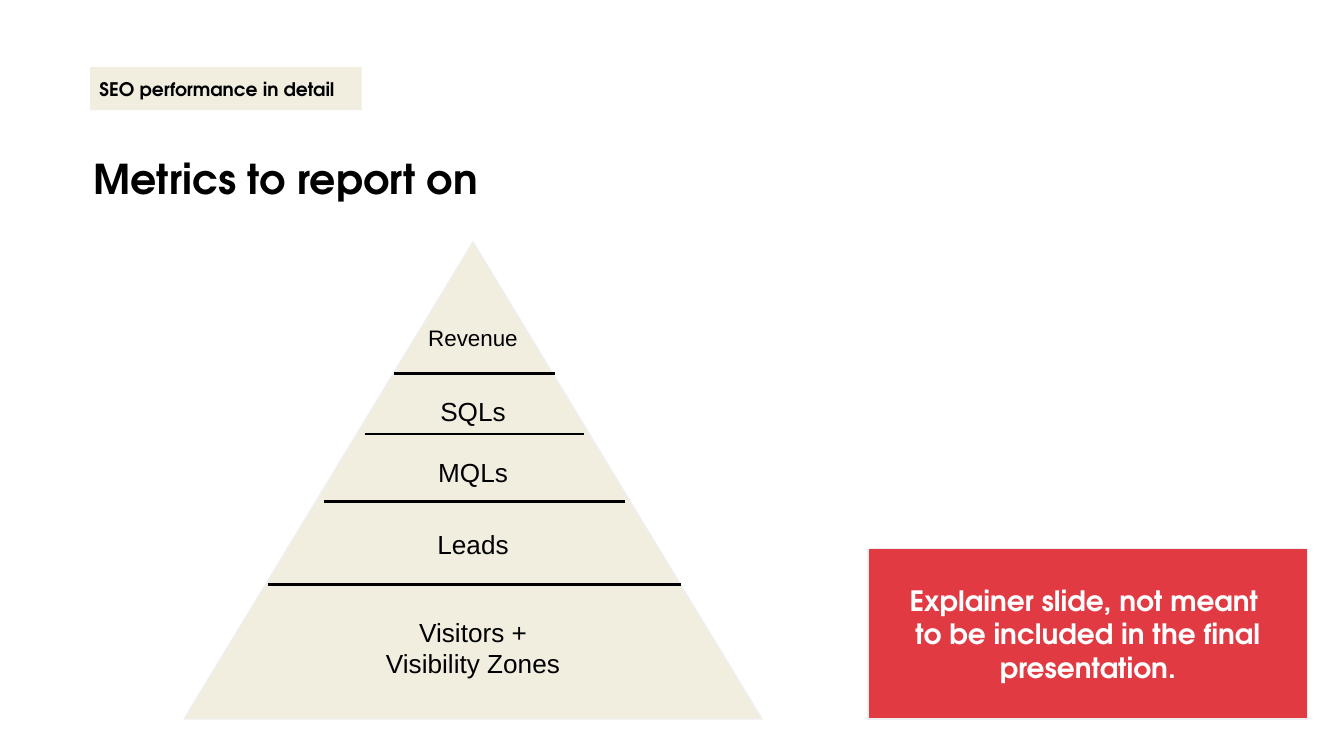
from dataclasses import dataclass

from lxml.etree import SubElement
from pptx import Presentation
from pptx.dml.color import RGBColor
from pptx.enum.shapes import MSO_CONNECTOR, MSO_SHAPE
from pptx.enum.text import MSO_ANCHOR, MSO_AUTO_SIZE, PP_ALIGN
from pptx.oxml.ns import qn
from pptx.util import Inches, Pt


@dataclass(frozen=True)
class Theme:
    ink: str = "000000"
    paper: str = "FFFFFF"
    sand: str = "F1EEE0"
    outline: str = "EFEFEF"
    alert: str = "E23A43"
    heading_font: str = "TeX Gyre Adventor"
    body_font: str = "Arial"
    tag_size: int = 10
    peak_size: int = 12
    tier_size: int = 14
    note_size: int = 15
    title_size: int = 22
    outline_width: float = 0.75
    divider_width: float = 1.5


THEME = Theme()

# label, lines, type size, label width, label centre and divider height from
# the top of the pyramid, divider length
TIERS = [
    ("Revenue", 1, THEME.peak_size, 0.92, 0.71, 0.98, 1.2),
    ("SQLs", 1, THEME.tier_size, 0.73, 1.26, 1.43, 1.63),
    ("MQLs", 1, THEME.tier_size, 0.73, 1.71, 1.93, 2.24),
    ("Leads", 1, THEME.tier_size, 0.92, 2.25, 2.55, 3.07),
    ("Visitors + Visibility Zones", 2, THEME.tier_size, 1.55, 3.02, None, None),
]


def rgb(color):
    return RGBColor.from_string(color)


def add_panel(slide, preset, box, fill, outline=None):
    panel = slide.shapes.add_shape(preset, *map(Inches, box))
    panel.shadow.inherit = False
    panel.fill.solid()
    panel.fill.fore_color.rgb = rgb(fill)
    if outline:
        panel.line.color.rgb = rgb(outline)
        panel.line.width = Pt(THEME.outline_width)
    else:
        panel.line.fill.background()
    return panel


def write(frame, paragraphs, size, font, color=THEME.ink, bold=False,
          align=PP_ALIGN.LEFT, anchor=MSO_ANCHOR.TOP, inset=0.1):
    frame.word_wrap = True
    frame.vertical_anchor = anchor
    frame.margin_left = frame.margin_right = Inches(inset)
    frame.margin_top = frame.margin_bottom = Inches(inset)
    for index, text in enumerate(paragraphs):
        paragraph = frame.add_paragraph() if index else frame.paragraphs[0]
        paragraph.alignment = align
        run = paragraph.add_run()
        run.text = text
        run.font.size = Pt(size)
        run.font.name = font
        run.font.bold = bold
        run.font.color.rgb = rgb(color)


def add_label(slide, box, text, size, font, **style):
    frame = slide.shapes.add_textbox(*map(Inches, box)).text_frame
    write(frame, [text], size, font, **style)
    frame.auto_size = MSO_AUTO_SIZE.SHAPE_TO_FIT_TEXT


def add_divider(slide, center, y, length):
    divider = slide.shapes.add_connector(
        MSO_CONNECTOR.STRAIGHT, Inches(center - length / 2), Inches(y),
        Inches(center + length / 2), Inches(y))
    divider.line.color.rgb = rgb(THEME.ink)
    divider.line.width = Pt(THEME.divider_width)
    SubElement(divider.element.spPr, qn("a:effectLst"))


def add_pyramid(slide, box):
    left, top, width, _ = box
    center = left + width / 2
    add_panel(slide, MSO_SHAPE.FLOWCHART_EXTRACT, box, THEME.sand, THEME.outline)
    for text, lines, size, label_width, middle, divider_y, length in TIERS:
        height = 0.2 + lines * size * 1.2 / 72
        label_box = (center - label_width / 2, top + middle - height / 2,
                     label_width, height)
        add_label(slide, label_box, text, size, THEME.body_font,
                  align=PP_ALIGN.CENTER)
        if length:
            add_divider(slide, center + 0.01, top + divider_y, length)


def add_header(slide, box):
    left, top, width, _ = box
    # Section tag
    tag = add_panel(slide, MSO_SHAPE.RECTANGLE, (left + 0.07, top, 2.02, 0.32),
                    THEME.sand)
    write(tag.text_frame, ["SEO performance in detail"], THEME.tag_size,
          THEME.heading_font, bold=True, anchor=MSO_ANCHOR.MIDDLE, inset=0.07)
    # Title
    add_label(slide, (left, top + 0.54, width, 0.57), "Metrics to report on",
              THEME.title_size, THEME.heading_font, bold=True)


def add_explainer(slide, box):
    note = add_panel(slide, MSO_SHAPE.RECTANGLE, box, THEME.alert, THEME.outline)
    write(note.text_frame,
          ["Explainer slide, not meant ",
           "to be included in the final presentation."],
          THEME.note_size, THEME.heading_font, color=THEME.paper, bold=True,
          align=PP_ALIGN.CENTER, anchor=MSO_ANCHOR.MIDDLE)


def main():
    deck = Presentation()
    # 16:9 page
    deck.slide_width = Inches(10)
    deck.slide_height = Inches(10 * 9 / 16)
    slide = deck.slides.add_slide(deck.slide_layouts[6])
    add_pyramid(slide, (1.37, 1.8, 4.3, 3.55))
    add_header(slide, (0.6, 0.5, 6.99, 1.11))
    add_explainer(slide, (6.46, 4.08, 3.27, 1.27))
    deck.save("out.pptx")


if __name__ == "__main__":
    main()
